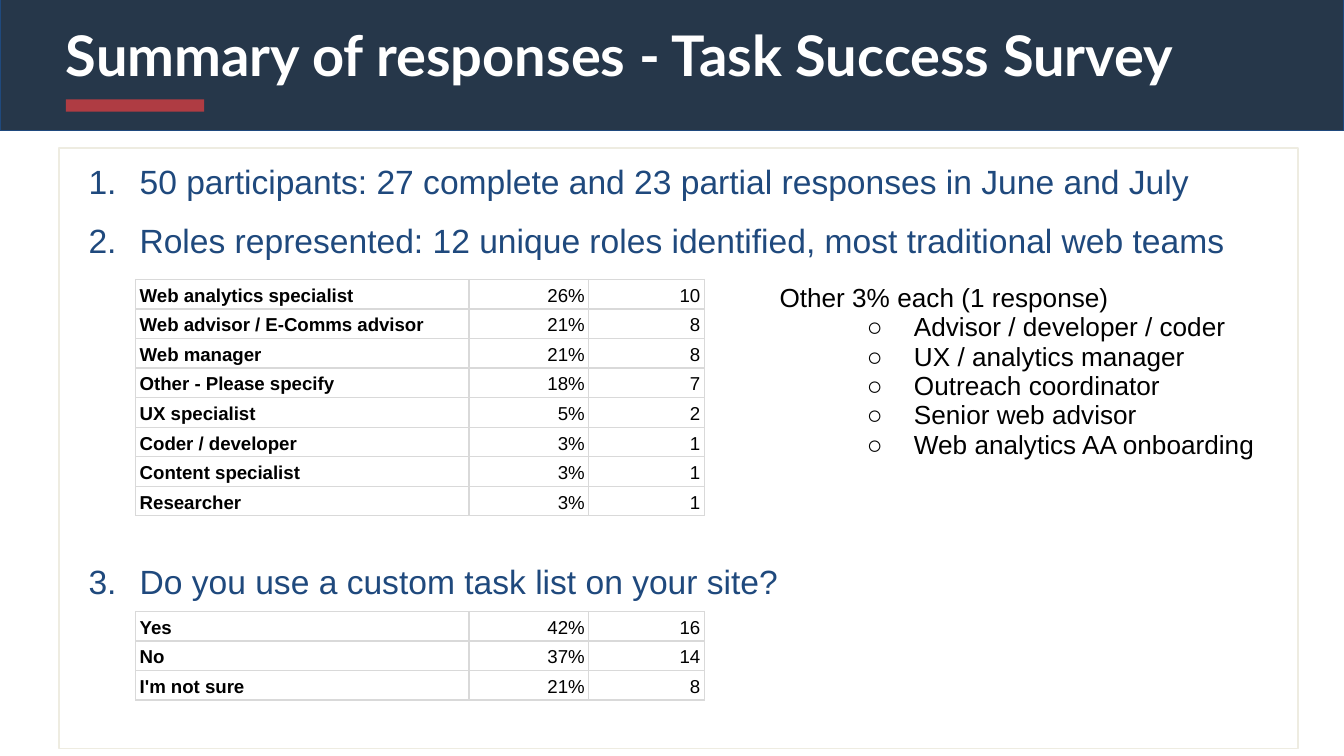
from dataclasses import dataclass

from pptx import Presentation
from pptx.dml.color import RGBColor
from pptx.enum.shapes import MSO_SHAPE
from pptx.enum.text import MSO_ANCHOR, MSO_AUTO_SIZE, PP_ALIGN
from pptx.oxml.ns import qn
from pptx.util import Inches, Pt
from lxml.etree import SubElement, Element


@dataclass(frozen=True)
class Theme:
    """Colours, fonts and type sizes of the slide."""
    navy: str = "26374A"
    blue: str = "1F497D"
    red: str = "AF3C43"
    cream: str = "EEECE1"
    grey: str = "D9D9D9"
    white: str = "FFFFFF"
    black: str = "000000"
    head: str = "Lato"
    body: str = "Arial"
    title: int = 30
    point: int = 18
    note: int = 14
    cell: int = 10


THEME = Theme()
ROLES = [
    ("Web analytics specialist", "26%", "10"),
    ("Web advisor / E-Comms advisor", "21%", "8"),
    ("Web manager", "21%", "8"),
    ("Other - Please specify", "18%", "7"),
    ("UX specialist", "5%", "2"),
    ("Coder / developer", "3%", "1"),
    ("Content specialist", "3%", "1"),
    ("Researcher", "3%", "1"),
]
USES = [("Yes", "42%", "16"), ("No", "37%", "14"), ("I'm not sure", "21%", "8")]
POINTS = [
    ("50 participants: 27 complete and 23 partial responses in June and July", 0),
    ("Roles represented: 12 unique roles identified, most traditional web teams", 7),
    ("Do you use a custom task list on your site?", 158),
]
OTHERS = [
    "Advisor / developer / coder",
    "UX / analytics manager",
    "Outreach coordinator",
    "Senior web advisor",
    "Web analytics AA onboarding",
]
WIDTHS = (2.48, 0.89, 0.86)
ROW = 0.22


def write(frame, text, size, color=THEME.black, font=THEME.body, bold=False,
          align=PP_ALIGN.LEFT, lines=1, before=0, indent=None, mark=None, level=0):
    """Add one formatted paragraph to a text frame."""
    para = frame.paragraphs[0]
    if para.runs:
        para = frame.add_paragraph()
    para.alignment, para.line_spacing, para.level = align, lines, level
    para.space_before = Pt(before)
    run = para.add_run()
    run.text = text
    run.font.size, run.font.name, run.font.bold = Pt(size), font, bold
    run.font.color.rgb = RGBColor.from_string(color)
    if mark:
        props = para._p.get_or_add_pPr()
        left, hang = indent
        props.set("marL", str(Inches(left)))
        props.set("indent", str(Inches(hang)))
        SubElement(SubElement(props, qn("a:buClr")), qn("a:srgbClr"), val=color)
        SubElement(props, qn("a:buFont"), typeface=font)
        if mark == "1.":
            SubElement(props, qn("a:buAutoNum"), type="arabicPeriod")
        else:
            SubElement(props, qn("a:buChar"), char=mark)


def inset(item, side, top):
    """Set the margins of a text frame or cell."""
    item.margin_left = item.margin_right = Inches(side)
    item.margin_top = item.margin_bottom = Inches(top)


def block(slide, box, fill=None, line=None, width=1):
    """Place a plain rectangle."""
    shape = slide.shapes.add_shape(MSO_SHAPE.RECTANGLE, *map(Inches, box))
    shape.shadow.inherit = False
    if fill:
        shape.fill.solid()
        shape.fill.fore_color.rgb = RGBColor.from_string(fill)
    else:
        shape.fill.background()
    if line:
        shape.line.color.rgb = RGBColor.from_string(line)
        shape.line.width = Pt(width)
    else:
        shape.line.fill.background()
    return shape


def border(cell, color=None):
    """Draw or clear the four sides of a cell."""
    props = cell._tc.get_or_add_tcPr()
    for spot, side in enumerate(("L", "R", "T", "B")):
        edge = Element(qn(f"a:ln{side}"), w=str(Pt(0.75)))
        if color:
            SubElement(SubElement(edge, qn("a:solidFill")), qn("a:srgbClr"), val=color)
        else:
            SubElement(edge, qn("a:noFill"))
        props.insert(spot, edge)


def grid(slide, box, count, widths):
    """Add a table without style bands or fills."""
    table = slide.shapes.add_table(count, len(widths), *map(Inches, box)).table
    table.first_row = table.horz_banding = False
    for col, width in zip(table.columns, widths):
        col.width = Inches(width)
    for cell in table.iter_cells():
        cell.fill.background()
    return table


def header(slide, box):
    """Build the title band with its red accent."""
    left, top, width, height = box
    block(slide, box, THEME.navy, THEME.blue, 0.75)
    title = slide.shapes.title
    title.element.getparent().append(title.element)
    title.left, title.top = Inches(left + 0.39), Inches(top + 0.06)
    title.width, title.height = Inches(8.62), Inches(1.05)
    frame = title.text_frame
    frame.word_wrap = True
    frame.auto_size = MSO_AUTO_SIZE.NONE
    frame.vertical_anchor = MSO_ANCHOR.TOP
    inset(frame, 0.1, 0.1)
    write(frame, "Summary of responses - Task Success Survey", THEME.title,
          THEME.white, THEME.head, True)
    block(slide, (left + 0.49, top + 0.75, 1.03, 0.09), THEME.red)


def panel(slide, box):
    """Build the outlined panel of numbered points."""
    frame = block(slide, box, line=THEME.cream).text_frame
    frame.word_wrap = True
    frame.vertical_anchor = MSO_ANCHOR.TOP
    inset(frame, 0.1, 0.05)
    for text, gap in POINTS:
        write(frame, text, THEME.point, THEME.blue, lines=1.15, before=gap,
              indent=(0.5, -0.38), mark="1.")


def notes(slide, box):
    """Build the list of other roles."""
    cell = grid(slide, box, 1, [box[2]]).cell(0, 0)
    inset(cell, 0.1, 0.1)
    border(cell)
    write(cell.text_frame, "Other 3% each (1 response)", THEME.note)
    for text in OTHERS:
        write(cell.text_frame, text, THEME.note, indent=(1, -0.35), mark="○", level=1)


def tally(slide, left, top, rows):
    """Build a table of answers, shares and counts."""
    box = (left, top, sum(WIDTHS), ROW * len(rows))
    table = grid(slide, box, len(rows), WIDTHS)
    for r, row in enumerate(rows):
        table.rows[r].height = Inches(ROW)
        for c, text in enumerate(row):
            cell = table.cell(r, c)
            inset(cell, 0.03, 0.02)
            cell.vertical_anchor = MSO_ANCHOR.BOTTOM
            border(cell, THEME.grey)
            write(cell.text_frame, text, THEME.cell, bold=c == 0, lines=1.15,
                  align=PP_ALIGN.RIGHT if c else PP_ALIGN.LEFT)


def main():
    """Build and save the slide."""
    deck = Presentation()
    deck.slide_width = Inches(10)
    deck.slide_height = deck.slide_width * 9 // 16
    slide = deck.slides.add_slide(deck.slide_layouts[5])
    header(slide, (0, -0.01, 10, 0.98))
    panel(slide, (0.44, 1.1, 9.22, 4.47))
    notes(slide, (5.7, 2.01, 3.96, 1.6))
    tally(slide, 1.01, 2.08, ROLES)
    tally(slide, 1.01, 4.55, USES)
    deck.save("out.pptx")


if __name__ == "__main__":
    main()
